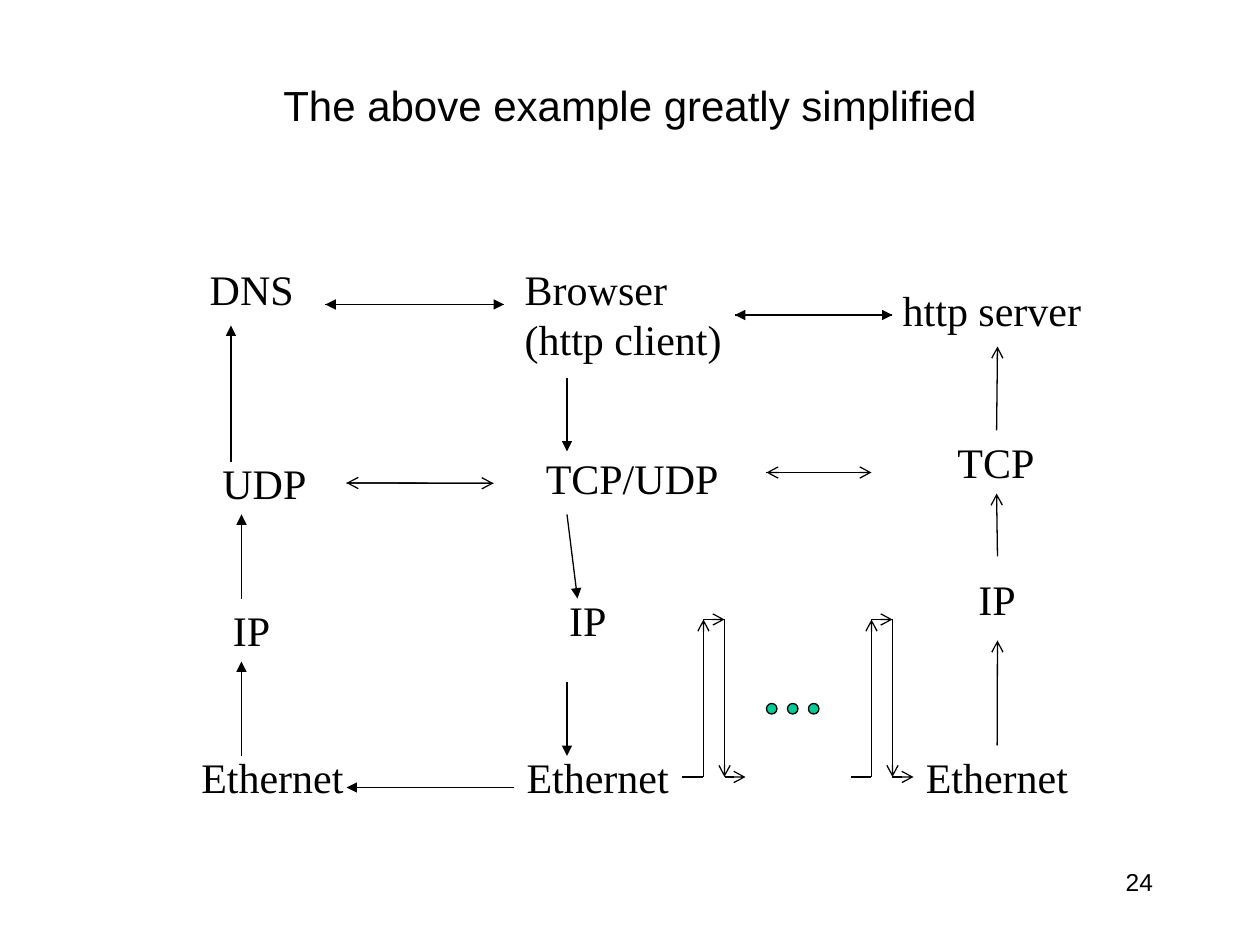
"""Build the slide that follows a web request through the protocol layers."""
from dataclasses import dataclass
from itertools import pairwise

from lxml import etree
from pptx import Presentation
from pptx.dml.color import RGBColor
from pptx.enum.shapes import MSO_CONNECTOR, MSO_SHAPE
from pptx.enum.text import MSO_ANCHOR, MSO_AUTO_SIZE, PP_ALIGN
from pptx.oxml.ns import qn
from pptx.util import Pt

STRAIGHT = MSO_CONNECTOR.STRAIGHT
OVAL = MSO_SHAPE.OVAL
TOP, MIDDLE = MSO_ANCHOR.TOP, MSO_ANCHOR.MIDDLE
LEFT, CENTER, RIGHT = PP_ALIGN.LEFT, PP_ALIGN.CENTER, PP_ALIGN.RIGHT
GROW, FIXED = MSO_AUTO_SIZE.SHAPE_TO_FIT_TEXT, MSO_AUTO_SIZE.NONE
SOLID, OPEN = "triangle", "arrow"


@dataclass(frozen=True)
class Theme:
    ink: RGBColor = RGBColor(0x00, 0x00, 0x00)
    dot: RGBColor = RGBColor(0x00, 0xCC, 0x99)
    heading_font: str = "Arial"
    label_font: str = "Times New Roman"
    text_size: float = 24
    number_size: float = 14
    stroke: float = 0.75


THEME = Theme()

LABELS = [
    ("DNS", 112.8, 147, 62.6),
    ("Browser\n(http client)", 292.8, 147, 130),
    ("http server", 508.8, 159, 117),
    ("TCP/UDP", 304.8, 255, 113),
    ("IP", 318.2, 336, 36),
    ("Ethernet", 293.8, 426, 95.8),
    ("TCP", 540, 246, 58.3),
    ("UDP", 120, 258, 62.6),
    ("IP", 552, 324, 36),
    ("IP", 126, 342, 36),
    ("Ethernet", 522, 426, 95.8),
    ("Ethernet", 108, 426, 95.8),
]
PEER_LINKS = [
    ((186, 174), (288, 174), SOLID),
    ((420, 180), (510, 180), SOLID),
    ((438, 270), (498, 270), OPEN),
    ((198, 276), (282, 276.2), OPEN),
]
LAYER_STEPS = [
    ((324, 216), (324, 258), SOLID),
    ((324, 294), (330, 342), SOLID),
    ((324, 390), (324, 432), SOLID),
    ((294, 450), (198, 450), SOLID),
    ((138, 432), (138, 378), SOLID),
    ((138, 342), (138, 294), SOLID),
    ((132, 264), (132, 186), SOLID),
    ((569.8, 426), (570, 366), OPEN),
    ((570, 318), (569.5, 282), OPEN),
    ((569.5, 246), (570, 198), OPEN),
]
ROUTER_LEFTS = (390, 486)
ROUTER_STEP, ROUTER_TOP, ROUTER_BOTTOM = 12, 354, 444


def apply(target, values):
    """Set each attribute in values on target."""
    for name, value in values.items():
        setattr(target, name, value)


def add_text(slide, text, box, font, size, align=LEFT, anchor=TOP, wrap=True):
    """Add a text box with one paragraph for each line of text."""
    frame = slide.shapes.add_textbox(*map(Pt, box)).text_frame
    apply(frame, {"text": text, "word_wrap": wrap, "vertical_anchor": anchor,
                  "auto_size": FIXED if wrap else GROW})
    for paragraph in frame.paragraphs:
        paragraph.alignment = align
        apply(paragraph.font, {"name": font, "size": Pt(size)})
        paragraph.font.color.rgb = THEME.ink


def add_arrow(slide, start, end, head=None):
    """Draw a thin line from start to end, with an optional arrowhead."""
    arrow = slide.shapes.add_connector(STRAIGHT, *map(Pt, (*start, *end)))
    arrow.line.width = Pt(THEME.stroke)
    arrow.line.color.rgb = THEME.ink
    properties = arrow._element.spPr
    if head:
        etree.SubElement(properties.find(qn("a:ln")), qn("a:tailEnd"), type=head)
    etree.SubElement(properties, qn("a:effectLst"))


def add_peer_link(slide, start, end, head):
    """Join two peers with one arrow each way."""
    add_arrow(slide, start, end, head)
    add_arrow(slide, end, start, head)


def add_router(slide, left):
    """Draw the path up into a router and back down to the wire."""
    xs = [left + ROUTER_STEP * step for step in range(4)]
    route = [(xs[0], ROUTER_BOTTOM), (xs[1], ROUTER_BOTTOM), (xs[1], ROUTER_TOP),
             (xs[2], ROUTER_TOP), (xs[2], ROUTER_BOTTOM), (xs[3], ROUTER_BOTTOM)]
    for index, (start, end) in enumerate(pairwise(route)):
        add_arrow(slide, start, end, OPEN if index else None)


def add_dot(slide, left):
    """Draw one dot of the ellipsis between the routers."""
    dot = slide.shapes.add_shape(OVAL, Pt(left), Pt(402), Pt(6), Pt(6))
    dot.shadow.inherit = False
    dot.fill.solid()
    dot.fill.fore_color.rgb = THEME.dot
    dot.line.color.rgb = THEME.ink
    dot.line.width = Pt(THEME.stroke)


def main():
    """Assemble and save the slide."""
    deck = Presentation()
    apply(deck, {"slide_width": Pt(720), "slide_height": Pt(540)})
    slide = deck.slides.add_slide(deck.slide_layouts[6])
    add_text(slide, "24", (516, 492, 150, 36), THEME.heading_font,
             THEME.number_size, align=RIGHT)
    add_text(slide, "The above example greatly simplified", (54, 30, 612, 60),
             THEME.heading_font, THEME.text_size, align=CENTER, anchor=MIDDLE)
    for text, left, top, width in LABELS:
        height = 36 + 28.8 * text.count("\n")
        add_text(slide, text, (left, top, width, height), THEME.label_font,
                 THEME.text_size, wrap=False)
    for link in PEER_LINKS:
        add_peer_link(slide, *link)
    for step in LAYER_STEPS:
        add_arrow(slide, *step)
    for left in ROUTER_LEFTS:
        add_router(slide, left)
    for index in range(3):
        add_dot(slide, 438 + 12 * index)
    deck.save("out.pptx")


if __name__ == "__main__":
    main()
